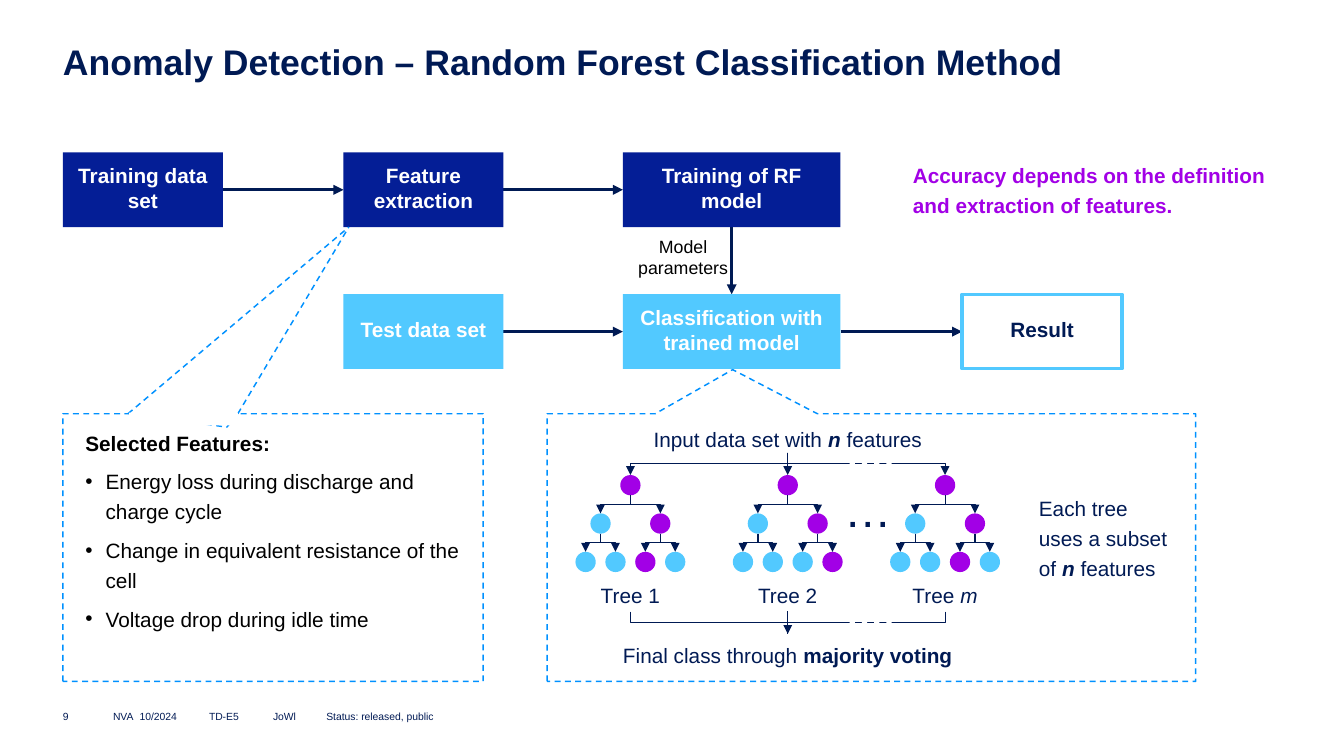
from collections import namedtuple

from lxml import etree
from pptx import Presentation
from pptx.dml.color import RGBColor
from pptx.enum.dml import MSO_LINE
from pptx.enum.shapes import MSO_CONNECTOR as Connector, MSO_SHAPE as Preset
from pptx.enum.text import MSO_ANCHOR as Anchor, PP_ALIGN as Align
from pptx.oxml.ns import qn
from pptx.util import Inches, Pt

Box = namedtuple("Box", "left top width height")

NAVY, ROYAL, SKY, DASH = "001A54", "041E96", "52C9FF", "0091FF"
PURPLE, BLACK, WHITE = "A200E6", "000000", "FFFFFF"
WIDTH, HEIGHT = 12.6, 7.09
MARGIN = 0.59


def color(value):
    return RGBColor.from_string(value)


def inches(*lengths):
    return [Inches(length) for length in lengths]


def set_values(target, values):
    for name, value in values.items():
        setattr(target, name, value)


def fill_frame(frame, paragraphs, insets=(0, 0, 0, 0), wrap=True, anchor=Anchor.TOP,
               align=Align.LEFT, size=14, ink=NAVY, bold=False, spacing=1.0, gap=0):
    """Each paragraph is a list of runs: (text, font values)."""
    left, top, right, bottom = inches(*insets)
    set_values(frame, dict(margin_left=left, margin_top=top, margin_right=right,
                           margin_bottom=bottom, word_wrap=wrap, vertical_anchor=anchor))
    for index, runs in enumerate(paragraphs):
        paragraph = frame.add_paragraph() if index else frame.paragraphs[0]
        set_values(paragraph, dict(alignment=align, line_spacing=spacing,
                                   space_before=Pt(gap if index else 0)))
        for text, values in runs:
            run = paragraph.add_run()
            run.text = text
            set_values(run.font, dict(name="Arial", size=Pt(size), bold=bold) | values)
            run.font.color.rgb = color(ink)


def add_text(slide, box, *paragraphs, **options):
    frame = slide.shapes.add_textbox(*inches(*box)).text_frame
    fill_frame(frame, paragraphs, **options)
    return frame


def add_preset(slide, preset, box, fill=None, line=None, weight=1.0):
    shape = slide.shapes.add_shape(preset, *inches(*box))
    shape.shadow.inherit = False
    if fill:
        shape.fill.solid()
        shape.fill.fore_color.rgb = color(fill)
    else:
        shape.fill.background()
    if line:
        shape.line.color.rgb = color(line)
        shape.line.width = Pt(weight)
    else:
        shape.line.fill.background()
    return shape


def add_line(slide, start, end, ink=NAVY, weight=0.5, arrow=True, kind=Connector.STRAIGHT):
    connector = slide.shapes.add_connector(kind, *inches(*start, *end))
    connector.line.color.rgb = color(ink)
    connector.line.width = Pt(weight)
    if arrow:
        etree.SubElement(connector.line._get_or_add_ln(), qn("a:tailEnd"), type="triangle")
    etree.SubElement(connector._element.spPr, qn("a:effectLst"))
    return connector


def add_branch(slide, start, end, arrow=True):
    """Elbow that leaves downwards, turns sideways and ends downwards."""
    (x1, y1), (x2, y2) = start, end
    middle_x, middle_y = (x1 + x2) / 2, (y1 + y2) / 2
    side = 1 if x2 < x1 else -1
    half_drop, half_span = (y2 - y1) / 2, abs(x2 - x1) / 2
    connector = add_line(slide, (middle_x - side * half_drop, middle_y - half_span),
                         (middle_x + side * half_drop, middle_y + half_span),
                         arrow=arrow, kind=Connector.ELBOW)
    turn = 90 if side > 0 else 270
    connector._element.spPr.find(qn("a:xfrm")).set("rot", str(turn * 60000))


def add_callout(slide, box, tip):
    """Callout turned by a quarter, so that it fills the given box."""
    middle_x, middle_y = box.left + box.width / 2, box.top + box.height / 2
    turned = Box(middle_x - box.height / 2, middle_y - box.width / 2, box.height, box.width)
    shape = add_preset(slide, Preset.RECTANGULAR_CALLOUT, turned, line=DASH)
    shape.rotation = 270
    shape.line.dash_style = MSO_LINE.DASH
    shape.adjustments[0], shape.adjustments[1] = tip


def draw_title_and_footer(slide):
    add_text(slide, Box(MARGIN, 0.4, 11.42, 0.4),
             [("Anomaly Detection – Random Forest Classification Method", {})],
             size=24, bold=True, spacing=0.97)
    footer = dict(size=7, anchor=Anchor.MIDDLE)
    add_text(slide, Box(MARGIN, 6.62, 0.39, 0.2), [("9", {})], **footer)
    frame = add_text(slide, Box(1.06, 6.62, 5.04, 0.2),
                     [("NVA\t10/2024\tTD-E5\tJoWl\tStatus: released, public", {})], **footer)
    tabs = etree.SubElement(frame.paragraphs[0]._p.get_or_add_pPr(), qn("a:tabLst"))
    for position in (0.25, 0.57, 0.9, 1.17):
        etree.SubElement(tabs, qn("a:tab"), pos=str(Inches(position)), algn="l")


def draw_process(slide, box):
    step_height = 0.7
    columns = [(0, 1.5), (2.63, 1.5), (5.25, 2.04), (8.43, 1.5)]
    rows = [box.top, box.top + box.height - step_height]
    steps = [
        (0, 0, "Training data set", ROYAL), (1, 0, "Feature extraction", ROYAL),
        (2, 0, "Training of RF model", ROYAL), (1, 1, "Test data set", SKY),
        (2, 1, "Classification with trained model", SKY), (3, 1, "Result", None),
    ]
    # Arrows between neighbouring steps
    for column, row in [(0, 0), (1, 0), (1, 1), (2, 1)]:
        left, width = columns[column]
        middle = rows[row] + step_height / 2
        add_line(slide, (box.left + left + width, middle),
                 (box.left + columns[column + 1][0], middle), weight=2.25)
    model_left, model_width = columns[2]
    model_x = box.left + model_left + model_width / 2
    add_line(slide, (model_x, rows[0] + step_height), (model_x, rows[1]), weight=2.25)
    add_text(slide, Box(model_x - 0.89, rows[0] + 0.78, 0.87, 0.4),
             [("Model parameters", {})], size=12, ink=BLACK, align=Align.CENTER)
    # Steps
    for column, row, label, fill in steps:
        left, width = columns[column]
        shape = add_preset(slide, Preset.RECTANGLE,
                           Box(box.left + left, rows[row], width, step_height),
                           fill=fill, line=None if fill else SKY, weight=2.25)
        fill_frame(shape.text_frame, [[(label, {})]], insets=(0.12, 0.08, 0.12, 0.12),
                   anchor=Anchor.MIDDLE, align=Align.CENTER, bold=True,
                   ink=WHITE if fill else NAVY)
    # Remark beside the training row
    add_text(slide, Box(box.left + 7.87, box.top, 3.55, 0.64),
             [("Accuracy depends on the definition and extraction of features.", {})],
             insets=(0.1, 0.05, 0.1, 0.05), ink=PURPLE, bold=True, spacing=1.2)


def draw_features(slide, box, source):
    features = ["Energy loss during discharge and charge cycle",
                "Change in equivalent resistance of the cell",
                "Voltage drop during idle time"]
    frame = add_text(slide, Box(box.left + 0.21, box.top + 0.11, 3.61, 1.92),
                     [("Selected Features:", {"bold": True})],
                     *[[(feature, {})] for feature in features],
                     ink=BLACK, spacing=1.2, gap=6)
    for paragraph in frame.paragraphs[1:]:
        properties = paragraph._p.get_or_add_pPr()
        properties.set("marL", str(Inches(0.19)))
        properties.set("indent", str(-Inches(0.19)))
        etree.SubElement(properties, qn("a:buFont"), typeface="Arial")
        etree.SubElement(properties, qn("a:buChar"), char="•")
    add_callout(slide, box, (0.45, -0.11))
    # Pointer to the feature extraction step
    for offset in (1.64, 0.61):
        line = add_line(slide, (box.left + offset, box.top), source,
                        ink=DASH, weight=1, arrow=False)
        line.line.dash_style = MSO_LINE.DASH
    add_preset(slide, Preset.RECTANGLE, Box(box.left + 0.62, box.top - 0.01, 1.02, 0.12), fill=WHITE)


def draw_tree(slide, x, top, chosen_leaf):
    diameter, step = 0.19, 0.36
    levels = [[0], [-0.28, 0.28], [-0.42, -0.14, 0.14, 0.42]]
    for level, offsets in enumerate(levels):
        y = top + level * step
        for index, offset in enumerate(offsets):
            chosen = index == chosen_leaf >> (2 - level)
            add_preset(slide, Preset.OVAL,
                       Box(x + offset - diameter / 2, y, diameter, diameter),
                       fill=PURPLE if chosen else SKY)
            if level:
                parent = x + levels[level - 1][index // 2]
                add_branch(slide, (parent, y - step + diameter), (x + offset, y))


def draw_forest(slide, box):
    add_callout(slide, box, (0.665, -0.214))
    first, pitch, top = box.left + 0.78, 1.475, box.top + 0.575
    center = first + pitch
    label = dict(align=Align.CENTER, wrap=False)
    add_text(slide, Box(center - 1.35, top - 0.45, 2.7, 0.24),
             [("Input data set with ", {}), ("n", {"bold": True, "italic": True}),
              (" features", {})], **label)
    # Trees, fed from the input and joined in the vote
    vote_top, vote_end = top + 1.28, top + 1.49
    for index, (name, chosen_leaf) in enumerate([("1", 2), ("2", 3), ("m", 2)]):
        x = first + index * pitch
        draw_tree(slide, x, top, chosen_leaf)
        add_text(slide, Box(x - 0.5, top + 1.01, 1, 0.24),
                 [("Tree ", {}), (name, {"italic": name == "m"})], **label)
        if index == 1:
            add_line(slide, (x, top - 0.21), (x, top))
            add_line(slide, (x, vote_top), (x, vote_end))
        else:
            add_branch(slide, (center, top - 0.21), (x, top))
            add_branch(slide, (x, vote_top), (center, vote_end), arrow=False)
    add_text(slide, Box(center + 0.53, top + 0.05, 0.27, 0.54), [("…", {})], size=32)
    add_text(slide, Box(center - 1.7, top + 1.53, 3.4, 0.26),
             [("Final class through ", {}), ("majority voting", {"bold": True})],
             spacing=1.2, **label)
    add_text(slide, Box(box.left + 4.61, top + 0.15, 1.23, 0.82),
             [("Each tree uses a subset of ", {}), ("n", {"bold": True, "italic": True}),
              (" features", {})], spacing=1.2)
    # Gaps that dash both joining lines before the last tree
    for y in (top - 0.17, vote_top):
        for index in range(4):
            add_preset(slide, Preset.RECTANGLE,
                       Box(center + 0.58 + index * 0.115, y, 0.05, 0.14), fill=WHITE)


def main():
    presentation = Presentation()
    presentation.slide_width, presentation.slide_height = inches(WIDTH, HEIGHT)
    slide = presentation.slides.add_slide(presentation.slide_layouts[6])
    draw_title_and_footer(slide)
    draw_process(slide, Box(MARGIN, 1.43, 9.93, 2.03))
    draw_forest(slide, Box(5.13, 3.88, 6.08, 2.51))
    draw_features(slide, Box(MARGIN, 3.88, 3.94, 2.51), source=(3.27, 2.13))
    presentation.save("out.pptx")


if __name__ == "__main__":
    main()
